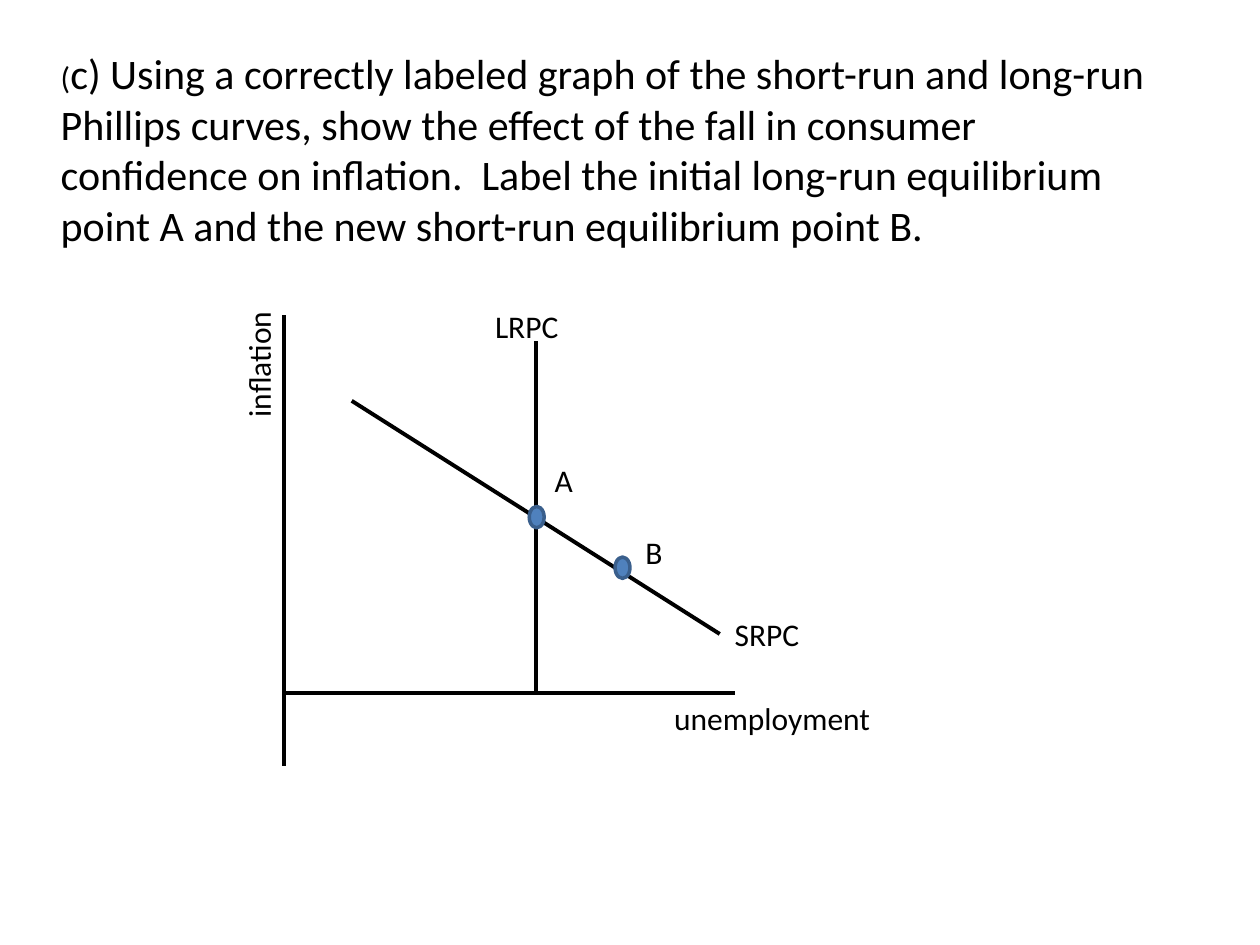
import dataclasses

import lxml.etree
import pptx
import pptx.dml.color
import pptx.enum.shapes
import pptx.enum.text
import pptx.oxml.ns
import pptx.util

Cm = pptx.util.Cm
Pt = pptx.util.Pt


@dataclasses.dataclass(frozen=True)
class Theme:
    """Colours, font and sizes of the slide."""
    font: str = "Calibri"
    ink: str = "000000"
    dot_fill: str = "4F81BD"
    dot_edge: str = "3A5F8C"
    question_size: int = 24
    label_size: int = 18
    line_width: float = 2.25
    dot_edge_width: float = 2


THEME = Theme()
QUESTION = (
    ("(", THEME.label_size),
    ("c) Using a correctly labeled graph of the short-run and long-run Phillips "
     "curves, show the effect of the fall in consumer confidence on inflation.  "
     "Label the initial long-run equilibrium point A and the new short-run "
     "equilibrium point B.", THEME.question_size),
)
LINES = (
    (0, 0, 0, 9.09),
    (0, 7.62, 9.09, 7.62),
    (5.08, 0.53, 5.08, 7.62),
    (1.37, 1.73, 8.79, 6.43),
)
LABELS = (
    ("unemployment", 7.62, 7.62, 0),
    ("inflation", -3.15, -0.84, 270),
    ("LRPC", 4.01, -0.28, 0),
    ("SRPC", 8.84, 5.92, 0),
    ("A", 5.21, 2.82, 0),
    ("B", 7.04, 4.27, 0),
)
POINTS = ((4.95, 3.86), (6.68, 4.88))
LABEL_SIZE = (5.28, 1.02)
POINT_SIZE = (0.3, 0.43)


def apply_format(target, values):
    """Set every attribute named in values on target."""
    for name, value in values.items():
        setattr(target, name, value)


def rgb(value):
    """Turn a hex string into a colour."""
    return pptx.dml.color.RGBColor.from_string(value)


def add_span(para, text, size):
    """Append text in the theme font and ink."""
    span = para.add_run()
    span.text = text
    apply_format(span.font, {"name": THEME.font, "size": Pt(size)})
    span.font.color.rgb = rgb(THEME.ink)


def draw_question(page, box):
    """Place the question in the title placeholder."""
    title = page.shapes.title
    apply_format(title, dict(zip(("left", "top", "width", "height"), map(Cm, box))))
    apply_format(title.text_frame, {
        "word_wrap": True,
        "auto_size": pptx.enum.text.MSO_AUTO_SIZE.NONE,
        "vertical_anchor": pptx.enum.text.MSO_ANCHOR.TOP,
    })
    para = title.text_frame.paragraphs[0]
    para.alignment = pptx.enum.text.PP_ALIGN.LEFT
    for text, size in QUESTION:
        add_span(para, text, size)


def draw_line(page, left, top, ends):
    """Draw one straight line of the graph."""
    x1, y1, x2, y2 = ends
    line = page.shapes.add_connector(
        pptx.enum.shapes.MSO_CONNECTOR.STRAIGHT,
        Cm(left + x1), Cm(top + y1), Cm(left + x2), Cm(top + y2))
    line.line.color.rgb = rgb(THEME.ink)
    line.line.width = Pt(THEME.line_width)
    properties = line._element.spPr
    lxml.etree.SubElement(properties, pptx.oxml.ns.qn("a:effectLst"))


def draw_label(page, left, top, text, rotation):
    """Write one label of the graph."""
    label = page.shapes.add_textbox(Cm(left), Cm(top), *map(Cm, LABEL_SIZE))
    label.rotation = rotation
    label.text_frame.word_wrap = True
    add_span(label.text_frame.paragraphs[0], text, THEME.label_size)


def draw_point(page, left, top):
    """Mark one equilibrium point."""
    point = page.shapes.add_shape(
        pptx.enum.shapes.MSO_SHAPE.OVAL, Cm(left), Cm(top), *map(Cm, POINT_SIZE))
    point.shadow.inherit = False
    point.fill.solid()
    point.fill.fore_color.rgb = rgb(THEME.dot_fill)
    point.line.color.rgb = rgb(THEME.dot_edge)
    point.line.width = Pt(THEME.dot_edge_width)


def draw_phillips_graph(page, box):
    """Draw axes, curves, points and labels from the box's top left corner."""
    left, top = box[:2]
    for ends in LINES:
        draw_line(page, left, top, ends)
    for x, y in POINTS:
        draw_point(page, left + x, top + y)
    for text, x, y, rotation in LABELS:
        draw_label(page, left + x, top + y, text, rotation)


def main():
    """Build and save the deck."""
    deck = pptx.Presentation()
    apply_format(deck, {"slide_width": Cm(25.4), "slide_height": Cm(19.05)})
    page = deck.slides.add_slide(deck.slide_layouts.get_by_name("Title Only"))
    draw_question(page, (0.97, 0.84, 22.86, 4.37))
    draw_phillips_graph(page, (5.72, 6.35, 9.09, 9.09))
    deck.save("out.pptx")


if __name__ == "__main__":
    main()
